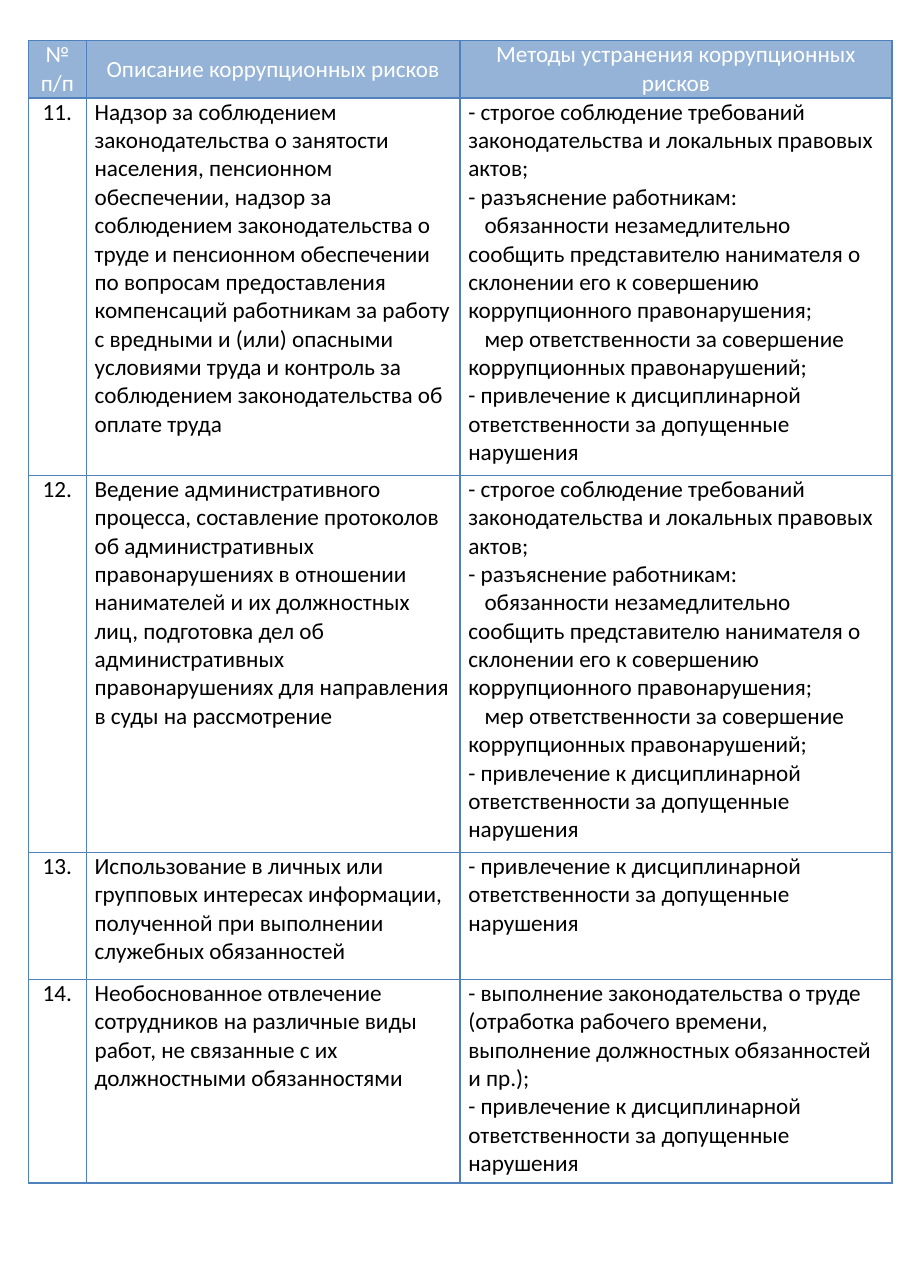
"""Build a one-page table of corruption risks and the methods of removing them."""
from dataclasses import dataclass

from lxml.etree import SubElement
from pptx import Presentation
from pptx.dml.color import RGBColor
from pptx.enum.text import MSO_ANCHOR, PP_ALIGN
from pptx.oxml.ns import qn
from pptx.util import Cm, Pt


@dataclass(frozen=True)
class Theme:
    font: str = "Calibri"
    size: int = 15
    header_fill: str = "95B3D7"
    header_text: str = "FFFFFF"
    text: str = "000000"
    border: str = "4F81BD"
    border_width: int = 1


theme = Theme()


def add_borders(cell):
    tc_pr = cell._tc.get_or_add_tcPr()
    for side in ("a:lnL", "a:lnR", "a:lnT", "a:lnB"):
        ln = SubElement(tc_pr, qn(side), w=str(Pt(theme.border_width)))
        fill = SubElement(ln, qn("a:solidFill"))
        SubElement(fill, qn("a:srgbClr"), val=theme.border)


def fill_cell(cell, lines, color, centred, inset):
    cell.margin_left = cell.margin_right = Cm(inset)
    cell.margin_top = cell.margin_bottom = 0
    tf = cell.text_frame
    for i, line in enumerate(lines):
        p = tf.paragraphs[0] if i == 0 else tf.add_paragraph()
        p.text = line
        p.alignment = PP_ALIGN.CENTER if centred else PP_ALIGN.LEFT
        if line in duties:
            p._p.get_or_add_pPr().set("indent", str(Cm(0.37)))
        for r in p.runs:
            r.font.name = theme.font
            r.font.size = Pt(theme.size)
            r.font.bold = False
            r.font.color.rgb = RGBColor.from_string(color)


duties = [
    "обязанности незамедлительно сообщить представителю нанимателя о склонении "
    "его к совершению коррупционного правонарушения;",
    "мер ответственности за совершение коррупционных правонарушений;",
]
discipline = "- привлечение к дисциплинарной ответственности за допущенные нарушения"
full_methods = [
    "- строгое соблюдение требований законодательства и локальных правовых актов;",
    "- разъяснение работникам:",
    *duties,
    discipline,
]
headers = ["№ п/п", "Описание коррупционных рисков", "Методы устранения коррупционных рисков"]
risks = [
    ("Надзор за соблюдением законодательства о занятости населения, пенсионном "
     "обеспечении, надзор за соблюдением законодательства о труде и пенсионном "
     "обеспечении по вопросам предоставления компенсаций работникам за работу с "
     "вредными и (или) опасными условиями труда и контроль за соблюдением "
     "законодательства об оплате труда", full_methods),
    ("Ведение административного процесса, составление протоколов об административных "
     "правонарушениях в отношении нанимателей и их должностных лиц, подготовка дел об "
     "административных правонарушениях для направления в суды на рассмотрение",
     full_methods),
    ("Использование в личных или групповых интересах информации, полученной при "
     "выполнении служебных обязанностей", [discipline]),
    ("Необоснованное отвлечение сотрудников на различные виды работ, не связанные с их "
     "должностными обязанностями",
     ["- выполнение законодательства о труде (отработка рабочего времени, выполнение "
      "должностных обязанностей и пр.);", discipline]),
]
col_widths = [1.32, 8.53, 9.86]
row_heights = [1.32, 8.61, 8.61, 2.9, 4.65]

prs = Presentation()
prs.slide_width, prs.slide_height = Cm(21), Cm(29.41)
s = prs.slides.add_slide(prs.slide_layouts[6])

frame = s.shapes.add_table(len(row_heights), len(col_widths), Cm(0.65), Cm(0.92),
                           Cm(sum(col_widths)), Cm(sum(row_heights)))
table = frame.table
table.first_row = table.horz_banding = False
for column, width in zip(table.columns, col_widths):
    column.width = Cm(width)
for row, height in zip(table.rows, row_heights):
    row.height = Cm(height)

for cell in table.iter_cells():
    add_borders(cell)
    cell.fill.background()

for col, header in enumerate(headers):
    cell = table.cell(0, col)
    fill_cell(cell, [header], theme.header_text, True, 0.22)
    cell.vertical_anchor = MSO_ANCHOR.MIDDLE
    cell.fill.solid()
    cell.fill.fore_color.rgb = RGBColor.from_string(theme.header_fill)

for row, (risk, methods) in enumerate(risks, start=1):
    fill_cell(table.cell(row, 0), [f"{row + 10}."], theme.text, True, 0.22)
    fill_cell(table.cell(row, 1), [risk], theme.text, False, 0.19)
    fill_cell(table.cell(row, 2), methods, theme.text, False, 0.19)

prs.save("out.pptx")
